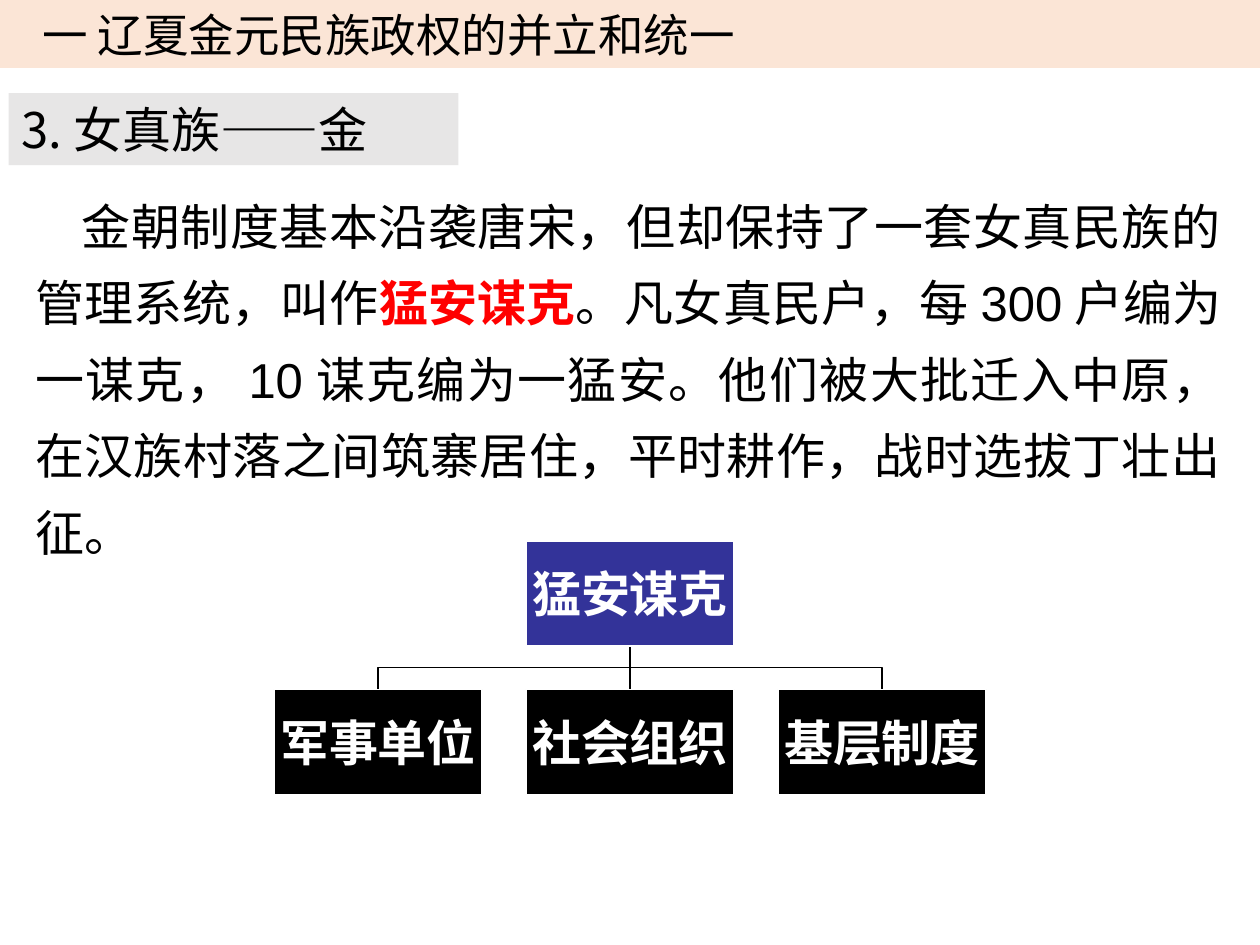
from pptx import Presentation
from pptx.dml.color import RGBColor
from pptx.enum.shapes import MSO_CONNECTOR, MSO_SHAPE
from pptx.enum.text import MSO_ANCHOR, PP_ALIGN
from pptx.oxml.ns import qn
from pptx.util import Pt
from lxml import etree

RECTANGLE, STRAIGHT = MSO_SHAPE.RECTANGLE, MSO_CONNECTOR.STRAIGHT
MIDDLE, TOP = MSO_ANCHOR.MIDDLE, MSO_ANCHOR.TOP
LEFT, CENTER, JUSTIFY = PP_ALIGN.LEFT, PP_ALIGN.CENTER, PP_ALIGN.JUSTIFY

# Content
TITLE = "一 辽夏金元民族政权的并立和统一"
HEADING = "3.女真族——金"
BODY = [
    ("金朝制度基本沿袭唐宋，但却保持了一套女真民族的管理系统，叫作", False),
    ("猛安谋克", True),
    ("。凡女真民户，每300户编为一谋克，10谋克编为一猛安。他们被大批迁入中原，"
     "在汉族村落之间筑寨居住，平时耕作，战时选拔丁壮出征。", False),
]
ROOT = "猛安谋克"
BRANCHES = ["军事单位", "社会组织", "基层制度"]

THEME = {
    "heading_font": "Noto Sans CJK SC", "body_font": "Arial",
    "title_size": 26, "text_size": 28,
    "black": RGBColor(0, 0, 0), "white": RGBColor(255, 255, 255),
    "red": RGBColor(255, 0, 0), "blue": RGBColor(0x33, 0x33, 0x99),
    "peach": RGBColor(0xFB, 0xE5, 0xD6), "grey": RGBColor(0xE7, 0xE6, 0xE6),
}

# Layout, in points
SLIDE_WIDTH, SLIDE_HEIGHT = 720, 540
BOX_WIDTH, BOX_HEIGHT, BOX_PITCH = 119, 60, 144
ROOT_TOP, BRANCH_TOP = 309, 394
CENTER_X = SLIDE_WIDTH / 2


def place(shape, left, top, width, height):
    shape.left, shape.top = Pt(left), Pt(top)
    shape.width, shape.height = Pt(width), Pt(height)


def fill(shape, color):
    shape.fill.solid()
    shape.fill.fore_color.rgb = color


def style_frame(shape, anchor, margins):
    frame = shape.text_frame
    frame.word_wrap = True
    frame.vertical_anchor = anchor
    (frame.margin_left, frame.margin_top,
     frame.margin_right, frame.margin_bottom) = map(Pt, margins)


def style_paragraph(paragraph, font_name, size, color, alignment, bold=False):
    paragraph.alignment = alignment
    font = paragraph.font
    font.name, font.size, font.bold = font_name, Pt(size), bold
    font.color.rgb = color
    properties = paragraph._p.pPr.find(qn("a:defRPr"))
    east_asian = etree.Element(qn("a:ea"), typeface=font_name)
    properties.find(qn("a:latin")).addnext(east_asian)


def add_box(slide, left, top, width, height, color):
    box = slide.shapes.add_shape(
        RECTANGLE, Pt(left), Pt(top), Pt(width), Pt(height))
    box.shadow.inherit = False
    fill(box, color)
    return box


def add_chart_box(slide, text, center, top, color):
    box = add_box(slide, center - BOX_WIDTH / 2, top,
                  BOX_WIDTH, BOX_HEIGHT, color)
    box.line.color.rgb = THEME["white"]
    box.line.width = Pt(1)
    style_frame(box, MIDDLE, (1.5, 1.5, 1.5, 1.5))
    box.text_frame.text = text
    style_paragraph(box.text_frame.paragraphs[0], THEME["body_font"],
                    THEME["text_size"], THEME["white"], CENTER, bold=True)


def add_branch_line(slide, center):
    top = ROOT_TOP + BOX_HEIGHT
    if center == CENTER_X:
        line = slide.shapes.add_connector(
            STRAIGHT, Pt(center), Pt(top), Pt(center), Pt(BRANCH_TOP))
        etree.SubElement(line._element.spPr, qn("a:effectLst"))
    else:
        middle = (top + BRANCH_TOP) / 2
        builder = slide.shapes.build_freeform(Pt(CENTER_X), Pt(top))
        corners = [(CENTER_X, middle), (center, middle), (center, BRANCH_TOP)]
        builder.add_line_segments(
            [(Pt(x), Pt(y)) for x, y in corners], close=False)
        line = builder.convert_to_shape()
        line.shadow.inherit = False
        line.fill.background()
    line.line.color.rgb = THEME["black"]
    line.line.width = Pt(1)


def main():
    presentation = Presentation()
    presentation.slide_width = Pt(SLIDE_WIDTH)
    presentation.slide_height = Pt(SLIDE_HEIGHT)
    slide = presentation.slides.add_slide(presentation.slide_layouts[5])

    # Title band
    title = slide.shapes.title
    place(title, 0, 0, SLIDE_WIDTH, 38.8)
    fill(title, THEME["peach"])
    style_frame(title, MIDDLE, (24, 0, 7.2, 0))
    title.text_frame.text = TITLE
    style_paragraph(title.text_frame.paragraphs[0], THEME["heading_font"],
                    THEME["title_size"], THEME["black"], LEFT)

    # Section heading
    heading = add_box(slide, 5, 53.2, 257, 41.2, THEME["grey"])
    heading.line.fill.background()
    style_frame(heading, MIDDLE, (7.2, 0, 7.2, 0))
    heading.text_frame.text = HEADING
    style_paragraph(heading.text_frame.paragraphs[0], THEME["heading_font"],
                    THEME["text_size"], THEME["black"], LEFT)

    # Body text with the key term highlighted
    body = slide.shapes.add_textbox(Pt(13), Pt(98.6), Pt(692), Pt(197))
    style_frame(body, TOP, (7.2, 3.6, 7.2, 3.6))
    paragraph = body.text_frame.paragraphs[0]
    style_paragraph(paragraph, THEME["body_font"], THEME["text_size"],
                    THEME["black"], JUSTIFY)
    paragraph.line_spacing = 1.3
    paragraph._p.pPr.set("indent", str(Pt(26.5)))
    for text, is_key in BODY:
        run = paragraph.add_run()
        run.text = text
        if is_key:
            run.font.bold = True
            run.font.color.rgb = THEME["red"]

    # Organisation chart: lines first, then boxes
    first = CENTER_X - BOX_PITCH * (len(BRANCHES) - 1) / 2
    centers = [first + BOX_PITCH * index for index in range(len(BRANCHES))]
    for center in centers:
        add_branch_line(slide, center)
    add_chart_box(slide, ROOT, CENTER_X, ROOT_TOP, THEME["blue"])
    for text, center in zip(BRANCHES, centers):
        add_chart_box(slide, text, center, BRANCH_TOP, THEME["black"])

    presentation.save("out.pptx")


if __name__ == "__main__":
    main()
